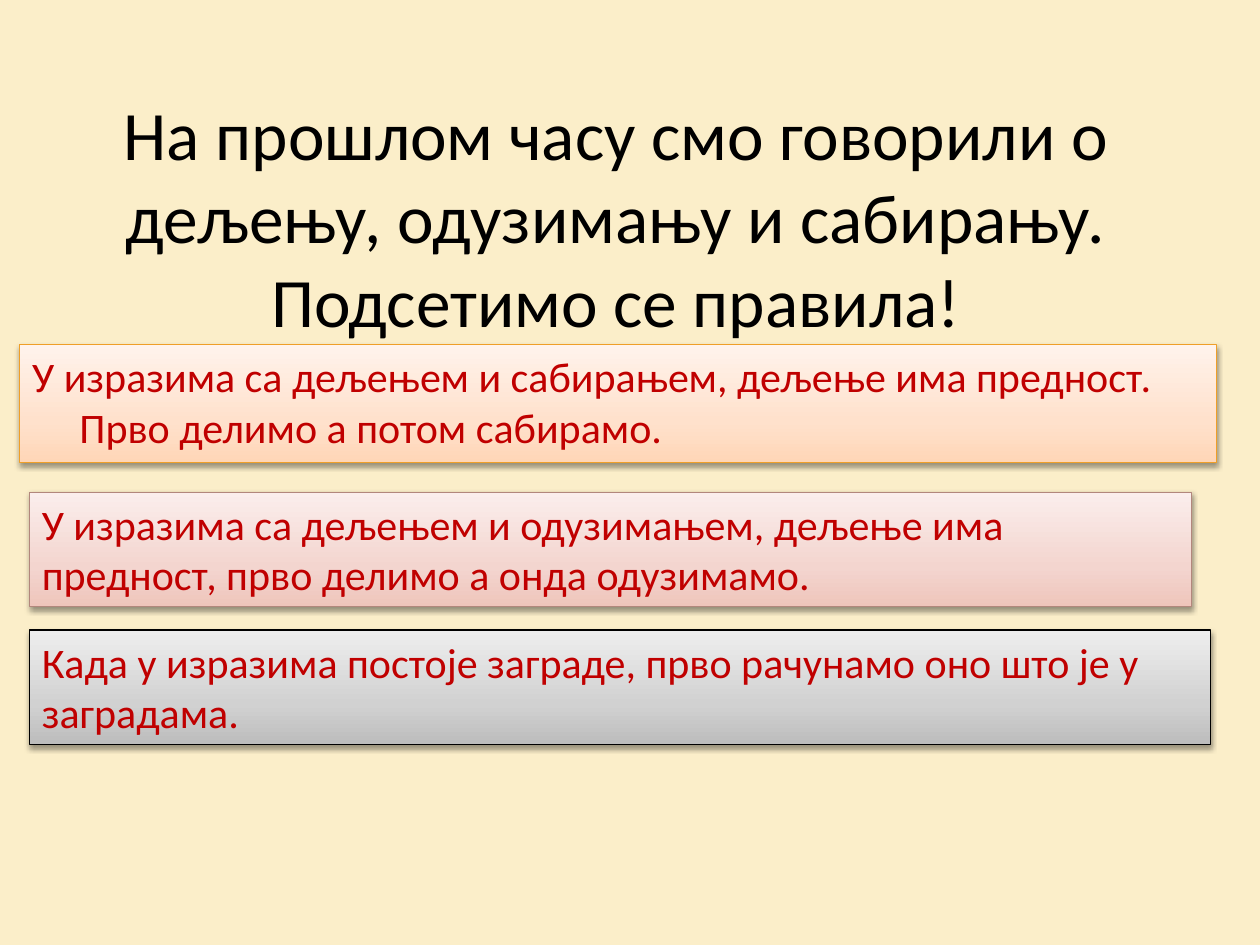
from copy import deepcopy
from dataclasses import dataclass

from lxml import etree
from pptx import Presentation, util as u
from pptx.dml.color import RGBColor
from pptx.enum import shapes, text
from pptx.oxml import ns


@dataclass(frozen=True)
class Theme:
    font: str = "Calibri"
    background: str = "FBEEC9"
    title_color: str = "000000"
    rule_color: str = "C00000"
    shadow_color: str = "000000"
    title_size: float = 39.6
    rule_size: float = 24
    orange: tuple = ("FFD6B7", "FFE1CC", "FFF3EC", "EF9F28")
    rose: tuple = ("EFC5BB", "F3D5CF", "FBEEEC", "B2877C")
    gray: tuple = ("BDBDBD", "D1D1D1", "EEEEEE", "000000")


def rgb(value):
    return RGBColor.from_string(value)


def apply(target, values):
    for name, value in values.items():
        setattr(target, name, value)


class SlideBuilder:
    def __init__(self, prs, theme):
        self.theme = theme
        self.s = prs.slides.add_slide(prs.slide_layouts[6])
        fill = self.s.background.fill
        fill.solid()
        fill.fore_color.rgb = rgb(theme.background)

    def label(self, sp, content, size, color, align, anchor):
        tf = sp.text_frame
        apply(tf, {"word_wrap": True, "vertical_anchor": anchor})
        p = tf.paragraphs[0]
        p.text = content
        p.alignment = align
        for r in p.runs:
            apply(r.font, {"name": self.theme.font, "size": u.Pt(size)})
            r.font.color.rgb = rgb(color)
        return p

    def title(self, box, content):
        sp = self.s.shapes.add_textbox(*map(u.Pt, box))
        self.label(sp, content, self.theme.title_size, self.theme.title_color,
                   text.PP_ALIGN.CENTER, text.MSO_ANCHOR.MIDDLE)

    def gradient(self, sp, colors):
        sp.fill.gradient()
        sp.fill.gradient_angle = 90
        stop_list = sp._element.spPr.find(".//" + ns.qn("a:gsLst"))
        stop_list.append(deepcopy(stop_list[-1]))
        for stop, position, color in zip(sp.fill.gradient_stops, (0, 0.35, 1), colors):
            stop.position = position
            stop.color.rgb = rgb(color)

    def shadow(self, sp):
        sp.shadow.inherit = False
        effects = sp._element.spPr.find(ns.qn("a:effectLst"))
        outer = etree.SubElement(effects, ns.qn("a:outerShdw"), blurRad=str(u.Pt(3.1)),
                                 dist=str(u.Pt(1.6)), dir="5400000", rotWithShape="0")
        color = etree.SubElement(outer, ns.qn("a:srgbClr"), val=self.theme.shadow_color)
        etree.SubElement(color, ns.qn("a:alpha"), val="38000")

    def rule(self, box, content, palette, hanging=0):
        sp = self.s.shapes.add_shape(shapes.MSO_SHAPE.RECTANGLE, *map(u.Pt, box))
        *stops, border = palette
        self.gradient(sp, stops)
        sp.line.color.rgb = rgb(border)
        sp.line.width = u.Pt(0.75)
        self.shadow(sp)
        p = self.label(sp, content, self.theme.rule_size, self.theme.rule_color,
                       text.PP_ALIGN.LEFT, text.MSO_ANCHOR.TOP)
        if hanging:
            props = p._p.get_or_add_pPr()
            props.set("marL", str(u.Pt(hanging)))
            props.set("indent", str(u.Pt(-hanging)))


def main():
    prs = Presentation()
    apply(prs, {"slide_width": u.Pt(720), "slide_height": u.Pt(540)})
    theme = Theme()
    slide = SlideBuilder(prs, theme)
    slide.title((28, 78.5, 648, 90),
                "На прошлом часу смо говорили о дељењу, одузимању и сабирању."
                "\vПодсетимо се правила!")
    slide.rule((11.3, 196.8, 684, 67.5),
               "У изразима са дељењем и сабирањем, дељење има предност. "
               "Прво делимо а потом сабирамо.", theme.orange, hanging=27)
    slide.rule((16.8, 281.3, 664, 65.4),
               "У изразима са дељењем и одузимањем, дељење има предност, "
               "прво делимо а онда одузимамо.", theme.rose)
    slide.rule((16.8, 360, 675, 65.4),
               "Када у изразима постоје заграде, прво рачунамо оно што је у "
               "заградама.", theme.gray)
    prs.save("out.pptx")


if __name__ == "__main__":
    main()
